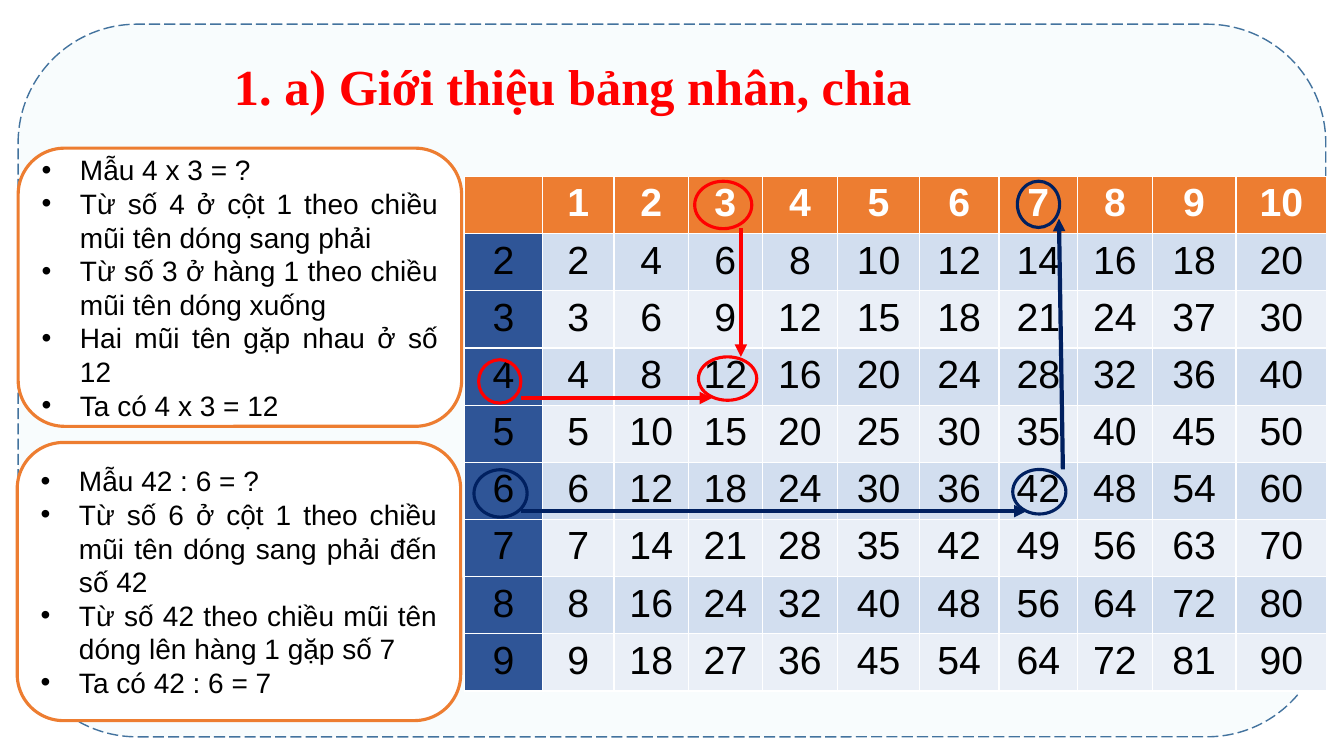
from lxml import etree
from pptx import Presentation
from pptx.dml.color import RGBColor
from pptx.enum.dml import MSO_LINE
from pptx.enum.shapes import MSO_CONNECTOR, MSO_SHAPE
from pptx.enum.text import MSO_ANCHOR, PP_ALIGN
from pptx.oxml.ns import qn
from pptx.util import Inches, Pt

ROUND, OVAL = MSO_SHAPE.ROUNDED_RECTANGLE, MSO_SHAPE.OVAL
STRAIGHT = MSO_CONNECTOR.STRAIGHT
DASH = MSO_LINE.LONG_DASH
MIDDLE = MSO_ANCHOR.MIDDLE
CENTER, JUSTIFY = PP_ALIGN.CENTER, PP_ALIGN.JUSTIFY

WHITE = RGBColor(0xFF, 0xFF, 0xFF)
BLACK = RGBColor(0, 0, 0)
RED = RGBColor(0xFF, 0, 0)
NAVY = RGBColor(0, 0x20, 0x60)
ORANGE = RGBColor(0xED, 0x7D, 0x31)
BLUE = RGBColor(0x2F, 0x55, 0x97)
STEEL = RGBColor(0x43, 0x73, 0x9E)
MIST = RGBColor(0xF8, 0xFC, 0xFD)
BANDS = RGBColor(0xEA, 0xEF, 0xF7), RGBColor(0xD2, 0xDE, 0xEF)

WIDE, HIGH = Inches(13.33), Inches(7.5)
LEFT, TOP = Inches(4.61), Inches(1.75)
COLS = [Inches(w) for w in
        (0.77, 0.71, 0.74, 0.73, 0.75, 0.81, 0.79, 0.78, 0.74, 0.83, 0.9)]
COUNT = 9
ROW = Inches(5.1) // COUNT
INDENT = Inches(0.38)

# Cells that do not hold the product of their row and column
ODD = {(3, 9): 37, (9, 7): 64}

TITLE = {"name": "Times New Roman", "size": Pt(36), "bold": True}
HEAD = {"name": "Arial", "size": Pt(28), "bold": True}
BODY = {"name": "Arial", "size": Pt(28), "bold": False}
NOTE = {"name": "Arial", "size": Pt(20)}

# Centre column and row, then width and height in rows
RINGS = [
    (3.47, 0.5, 1, 0.83, RED), (0.45, 3.59, 0.74, 0.76, RED),
    (3.53, 3.54, 1.02, 0.76, RED), (7.5, 0.49, 0.74, 0.81, NAVY),
    (0.46, 5.55, 0.93, 0.83, NAVY), (7.51, 5.52, 0.93, 0.78, NAVY),
]
# Start column and row, end column and row
ARROWS = [
    (3.71, 0.9, 3.71, 3.16, RED), (0.73, 3.88, 3.32, 3.88, RED),
    (7.81, 5.13, 7.76, 0.74, NAVY), (0.73, 5.86, 7.35, 5.86, NAVY),
]
NOTES = [
    (1.35, 19.6, [
        "Mẫu 4 x 3 = ?",
        "Từ số 4 ở cột 1 theo chiều mũi tên dóng sang phải",
        "Từ số 3 ở hàng 1 theo chiều mũi tên dóng xuống",
        "Hai mũi tên gặp nhau ở số 12",
        "Ta có 4 x 3 = 12"]),
    (1.28, 58.53, [
        "Mẫu 42 : 6 = ?",
        "Từ số 6 ở cột 1 theo chiều mũi tên dóng sang phải đến số 42",
        "Từ số 42 theo chiều mũi tên dóng lên hàng 1 gặp số 7",
        "Ta có 42 : 6 = 7"]),
]


def share(x, y, w, h):
    """Turn percentages of the slide's size into lengths."""
    return [int(part * full / 100)
            for part, full in zip((x, y, w, h), (WIDE, HIGH) * 2)]


def spot(col, row):
    """Find the point at a fractional column and row of the table."""
    whole = int(col)
    x = LEFT + sum(COLS[:whole]) + (col - whole) * COLS[whole]
    return int(x), int(TOP + row * ROW)


def write(para, text, form, color, align):
    para.alignment = align
    run = para.add_run()
    run.text = text
    for key, value in form.items():
        setattr(run.font, key, value)
    run.font.color.rgb = color


def add_form(slide, kind, box, fill, color, width):
    form = slide.shapes.add_shape(kind, *box)
    form.shadow.inherit = False
    if fill is None:
        form.fill.background()
    else:
        form.fill.solid()
        form.fill.fore_color.rgb = fill
    form.line.color.rgb = color
    form.line.width = Pt(width)
    return form


def add_title(slide, text):
    frame = slide.shapes.add_textbox(*share(7.13, 6.67, 70.97, 9.47)).text_frame
    frame.word_wrap = True
    write(frame.paragraphs[0], text, TITLE, RED, CENTER)


def add_grid(slide):
    """Draw the multiplication table with a header row and column."""
    table = slide.shapes.add_table(
        COUNT, len(COLS), LEFT, TOP, sum(COLS), ROW * COUNT).table
    for col, width in enumerate(COLS):
        table.columns[col].width = width
    for row in range(COUNT):
        table.rows[row].height = ROW
        left = row + 1
        for col in range(len(COLS)):
            cell = table.cell(row, col)
            cell.fill.solid()
            if row == 0:
                fill, form, color = ORANGE, HEAD, WHITE
            else:
                fill, form, color = BANDS[row % 2], BODY, BLACK
            cell.fill.fore_color.rgb = BLUE if row and col == 0 else fill
            if row or col:
                value = ODD.get((left, col), left * max(col, 1))
                write(cell.text_frame.paragraphs[0], str(value), form,
                      color, CENTER)


def add_ring(slide, col, row, w, h, color):
    x, y = spot(col, row)
    w, h = int(w * ROW), int(h * ROW)
    add_form(slide, OVAL, (x - w // 2, y - h // 2, w, h), None, color, 2.25)


def add_arrow(slide, col, row, to_col, to_row, color):
    arrow = slide.shapes.add_connector(
        STRAIGHT, *spot(col, row), *spot(to_col, to_row))
    arrow.line.color.rgb = color
    arrow.line.width = Pt(3)
    etree.SubElement(arrow.line._get_or_add_ln(), qn("a:tailEnd"),
                     type="triangle")
    etree.SubElement(arrow._element.spPr, qn("a:effectLst"))


def add_note(slide, x, y, lines):
    note = add_form(slide, ROUND, share(x, y, 33, 36.8), WHITE, ORANGE, 2.25)
    frame = note.text_frame
    frame.word_wrap = True
    frame.vertical_anchor = MIDDLE
    for at, text in enumerate(lines):
        para = frame.add_paragraph() if at else frame.paragraphs[0]
        write(para, text, NOTE, BLACK, JUSTIFY)
        props = para._p.get_or_add_pPr()
        props.set("marL", str(INDENT))
        props.set("indent", str(-INDENT))
        etree.SubElement(props, qn("a:buFont"), typeface="Arial")
        etree.SubElement(props, qn("a:buChar"), char="•")


def main():
    deck = Presentation()
    deck.slide_width, deck.slide_height = WIDE, HIGH
    slide = deck.slides.add_slide(deck.slide_layouts[6])
    panel = add_form(slide, ROUND, share(1.35, 3.2, 97.3, 94.27),
                     MIST, STEEL, 1)
    panel.line.dash_style = DASH
    add_title(slide, "1. a) Giới thiệu bảng nhân, chia")
    add_grid(slide)
    for ring in RINGS:
        add_ring(slide, *ring)
    for arrow in ARROWS:
        add_arrow(slide, *arrow)
    for note in NOTES:
        add_note(slide, *note)
    deck.save("out.pptx")


if __name__ == "__main__":
    main()
